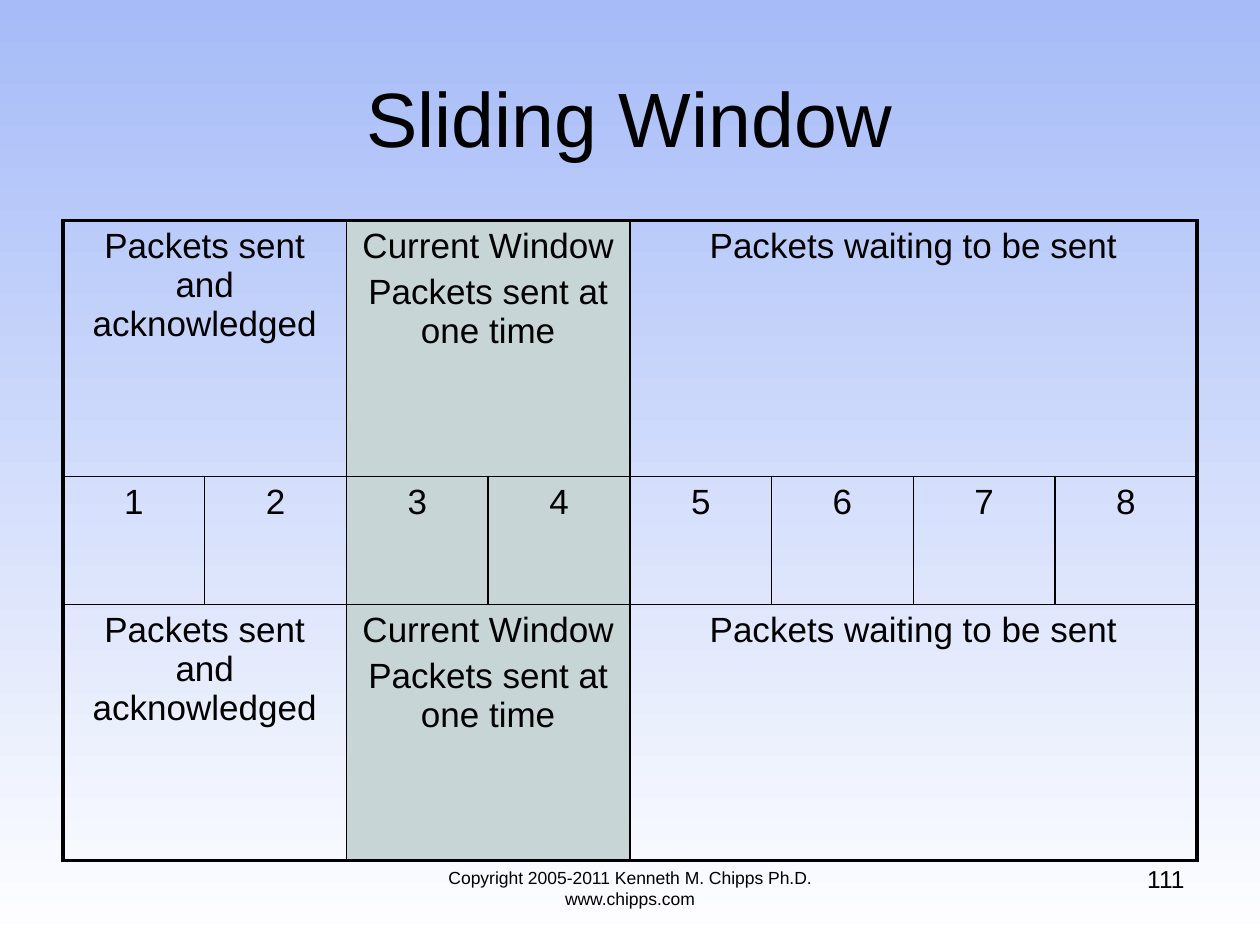
from dataclasses import dataclass

from lxml import etree
from pptx import Presentation
from pptx import util as u
from pptx.dml.color import RGBColor
from pptx.enum import text
from pptx.oxml.ns import qn

SLIDE_W, SLIDE_H = 10, 7.5
BLACK, WINDOW_FILL = "000000", "C7D5D7"
THIN, THICK = 1, 2.25
FONT = "Arial"
CENTER, RIGHT = text.PP_ALIGN.CENTER, text.PP_ALIGN.RIGHT
TOP, MIDDLE = text.MSO_ANCHOR.TOP, text.MSO_ANCHOR.MIDDLE
COLUMNS = 8
ROW_SHARES = (2, 1, 2)


@dataclass
class Label:
    words: str
    box: tuple[float, float, float, float]
    size: int
    align: text.PP_ALIGN = CENTER
    anchor: text.MSO_ANCHOR = TOP


@dataclass
class Block:
    row: int
    column: int
    span: int
    lines: tuple[str, ...]
    fill: str | None = None


LABELS = (
    Label("Sliding Window", (0.5, 0.3, 9, 1.25), 44, anchor=MIDDLE),
    Label("Copyright 2005-2011 Kenneth M. Chipps Ph.D. www.chipps.com",
          (3, 6.83, 4, 0.52), 10),
    Label("111", (7.17, 6.81, 2.33, 0.52), 14, RIGHT),
)

# The three packet states: first column, span, lines and fill
STATES = (
    (0, 2, ("Packets sent and acknowledged",), None),
    (2, 2, ("Current Window", "Packets sent at one time"), WINDOW_FILL),
    (4, 4, ("Packets waiting to be sent",), None),
)


def color(value: str) -> RGBColor:
    return RGBColor.from_string(value)


def write(paragraph, words: str, size: int, align) -> None:
    paragraph.alignment = align
    run = paragraph.add_run()
    run.text = words
    run.font.name = FONT
    run.font.size = u.Pt(size)
    run.font.color.rgb = color(BLACK)


def draw_label(slide, label: Label) -> None:
    frame = slide.shapes.add_textbox(*map(u.Inches, label.box)).text_frame
    frame.word_wrap = True
    frame.vertical_anchor = label.anchor
    write(frame.paragraphs[0], label.words, label.size, label.align)


def draw_border(cell, side: str, width: float) -> None:
    line = etree.SubElement(cell._tc.get_or_add_tcPr(), qn(f"a:ln{side}"),
                            w=str(u.Pt(width)))
    fill = etree.SubElement(line, qn("a:solidFill"))
    etree.SubElement(fill, qn("a:srgbClr"), val=BLACK)


def draw_block(table, block: Block) -> None:
    end = block.column + block.span
    outer = {"L": block.column == 0, "R": end == COLUMNS,
             "T": block.row == 0, "B": block.row == len(ROW_SHARES) - 1}
    cells = [table.cell(block.row, column) for column in range(block.column, end)]
    for cell in cells:
        for side, is_outer in outer.items():
            draw_border(cell, side, THICK if is_outer else THIN)
        if block.fill:
            cell.fill.solid()
            cell.fill.fore_color.rgb = color(block.fill)
        else:
            cell.fill.background()
    if block.span > 1:
        cells[0].merge(cells[-1])
    frame = cells[0].text_frame
    for index, words in enumerate(block.lines):
        paragraph = frame.add_paragraph() if index else frame.paragraphs[0]
        paragraph.space_before = u.Pt(4)
        write(paragraph, words, 20, CENTER)


def draw_window_table(slide) -> None:
    width, height = 9, 5.08
    table = slide.shapes.add_table(
        len(ROW_SHARES), COLUMNS, u.Inches(0.5), u.Inches(1.75),
        u.Inches(width), u.Inches(height)).table
    table.first_row = table.horz_banding = False
    for column in table.columns:
        column.width = u.Inches(width / COLUMNS)
    for row, share in zip(table.rows, ROW_SHARES):
        row.height = u.Inches(height * share / sum(ROW_SHARES))

    for column, span, lines, fill in STATES:
        # State above and below its numbered packets
        for row in (0, 2):
            draw_block(table, Block(row, column, span, lines, fill))
        for packet in range(column, column + span):
            draw_block(table, Block(1, packet, 1, (str(packet + 1),), fill))


def main() -> None:
    deck = Presentation()
    deck.slide_width, deck.slide_height = u.Inches(SLIDE_W), u.Inches(SLIDE_H)
    slide = deck.slides.add_slide(deck.slide_layouts[6])

    # Background fading downwards to white
    backdrop = slide.background.fill
    backdrop.gradient()
    backdrop.gradient_angle = 270
    for stop, position, value in zip(backdrop.gradient_stops, (0, 1),
                                     ("A6BBF8", "FFFFFF")):
        stop.position = position
        stop.color.rgb = color(value)

    # Title, footer and page number around the table
    for label in LABELS:
        draw_label(slide, label)
    draw_window_table(slide)
    deck.save("out.pptx")


if __name__ == "__main__":
    main()
